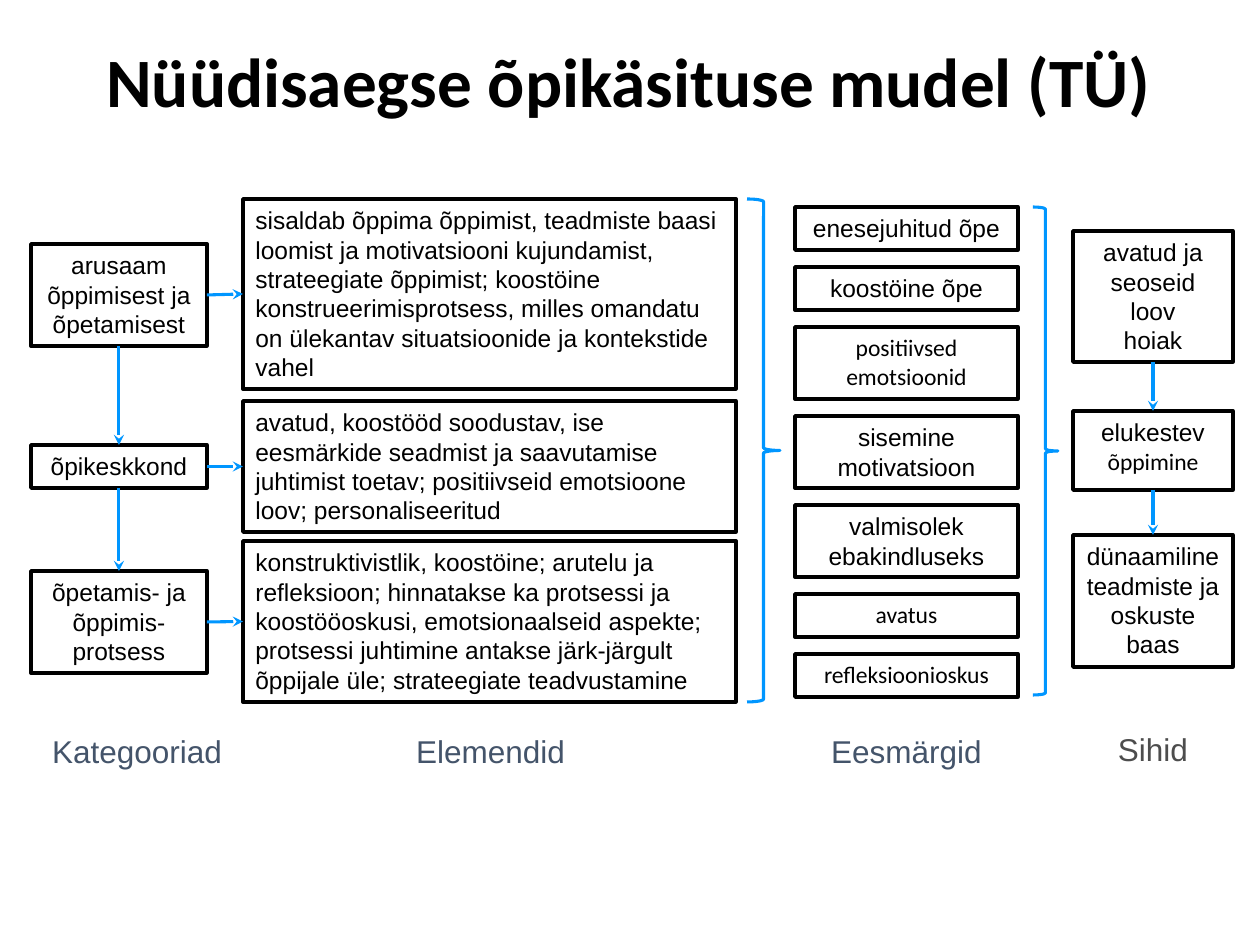
from itertools import pairwise

from lxml.etree import SubElement
from pptx import Presentation
from pptx.dml.color import RGBColor
from pptx.enum.shapes import MSO_CONNECTOR, MSO_SHAPE
from pptx.enum.text import MSO_ANCHOR, PP_ALIGN
from pptx.oxml.ns import qn
from pptx.util import Pt

SCALE = 914400 / 126
COLORS = {"ink": "000000", "paper": "FFFFFF", "arrow": "0096FF",
          "label": "44546A", "gray": "4D4D4D"}
SIZES = {"Arial": 14, "Calibri": 13.5}
TOP, LEFT, BOTTOM, RIGHT = range(4)


def px(*nums):
    return [round(n * SCALE) for n in nums]


def color(name):
    return RGBColor.from_string(COLORS[name])


def style(para, face, size, tone="ink", align=PP_ALIGN.CENTER):
    para.alignment = align
    para.font.name = face
    para.font.size = Pt(size)
    para.font.color.rgb = color(tone)


def add_box(slide, area, lines, align=PP_ALIGN.CENTER):
    """Draw a framed box; lines are (text, face) pairs, one per paragraph."""
    box = slide.shapes.add_shape(MSO_SHAPE.RECTANGLE, *px(*area))
    box.shadow.inherit = False
    box.fill.solid()
    box.fill.fore_color.rgb = color("paper")
    box.line.color.rgb = color("ink")
    box.line.width = Pt(2)
    frame = box.text_frame
    frame.word_wrap = True
    frame.vertical_anchor = MSO_ANCHOR.TOP
    for i, (text, face) in enumerate(lines):
        para = frame.add_paragraph() if i else frame.paragraphs[0]
        para.text = text
        style(para, face, SIZES[face], align=align)
    return box


def add_stack(slide, left, width, rows, align=PP_ALIGN.CENTER):
    """Draw a column of boxes; rows are (top, height, lines)."""
    return [add_box(slide, (left, top, width, height), lines, align)
            for top, height, lines in rows]


def add_arrow(slide, start, out, end, into):
    line = slide.shapes.add_connector(MSO_CONNECTOR.STRAIGHT, 0, 0, 0, 0)
    line.begin_connect(start, out)
    line.end_connect(end, into)
    line.line.color.rgb = color("arrow")
    line.line.width = Pt(1.75)
    SubElement(line.line._get_or_add_ln(), qn("a:tailEnd"), type="stealth")
    SubElement(line._element.spPr, qn("a:effectLst"))


def chain(slide, boxes):
    for upper, lower in pairwise(boxes):
        add_arrow(slide, upper, BOTTOM, lower, TOP)


def add_brace(slide, area):
    brace = slide.shapes.add_shape(MSO_SHAPE.RIGHT_BRACE, *px(*area))
    brace.shadow.inherit = False
    brace.fill.background()
    brace.line.color.rgb = color("arrow")
    brace.line.width = Pt(1.75)


def add_label(slide, area, text, tone="label", spacing=1.15):
    frame = slide.shapes.add_textbox(*px(*area)).text_frame
    frame.word_wrap = True
    pad = px(13)[0]
    frame.margin_left = frame.margin_right = pad
    frame.margin_top = frame.margin_bottom = pad
    para = frame.paragraphs[0]
    para.text = text
    para.line_spacing = spacing
    style(para, "Arial", 18, tone)


def add_title(slide, area, text):
    frame = slide.shapes.add_textbox(*px(*area)).text_frame
    frame.word_wrap = True
    frame.vertical_anchor = MSO_ANCHOR.MIDDLE
    para = frame.paragraphs[0]
    para.text = text
    para.line_spacing = 0.7
    para.font.bold = True
    style(para, "Calibri", 39.6)


def add_goals(slide, left, top, width, gap=17):
    goals = [
        (43, "enesejuhitud õpe", "Arial"),
        (43, "koostöine õpe", "Arial"),
        (72, "positiivsed emotsioonid", "Calibri"),
        (72, "sisemine motivatsioon", "Arial"),
        (72, "valmisolek ebakindluseks", "Arial"),
        (43, "avatus", "Calibri"),
        (43, "refleksioonioskus", "Calibri"),
    ]
    for height, text, face in goals:
        add_box(slide, (left, top, width, height), [(text, face)])
        top += height + gap


def add_parts(slide, left, top):
    """Draw the categories, each pointing to its elements."""
    kinds = add_stack(slide, left, 176, [
        (top + 45, 102, [("arusaam õppimisest ja õpetamisest", "Arial")]),
        (top + 246, 43, [("õpikeskkond", "Arial")]),
        (top + 372, 102, [("õpetamis- ja õppimis-\vprotsess", "Arial")]),
    ])
    items = add_stack(slide, left + 212, 493, [
        (top, 190, [(
            "sisaldab õppima õppimist, teadmiste baasi loomist ja "
            "motivatsiooni kujundamist, strateegiate õppimist; koostöine "
            "konstrueerimisprotsess, milles omandatu on ülekantav "
            "situatsioonide ja kontekstide vahel", "Arial")]),
        (top + 202, 131, [(
            "avatud, koostööd soodustav, ise eesmärkide seadmist ja "
            "saavutamise juhtimist toetav; positiivseid emotsioone loov; "
            "personaliseeritud", "Arial")]),
        (top + 342, 161, [(
            "konstruktivistlik, koostöine; arutelu ja refleksioon; "
            "hinnatakse ka protsessi ja koostööoskusi, emotsionaalseid "
            "aspekte; protsessi juhtimine antakse järk-järgult õppijale "
            "üle; strateegiate teadvustamine", "Arial")]),
    ], PP_ALIGN.LEFT)
    for kind, item in zip(kinds, items):
        add_arrow(slide, kind, RIGHT, item, LEFT)
    chain(slide, kinds)


def add_aims(slide, left, top):
    chain(slide, add_stack(slide, left, 160, [
        (top, 131, [("avatud ja seoseid loov", "Arial"),
                    ("hoiak", "Arial")]),
        (top + 180, 79, [("elukestev", "Arial"), ("õppimine", "Calibri")]),
        (top + 304, 132, [("dünaamiline teadmiste ja oskuste baas",
                           "Arial")]),
    ]))


def main():
    deck = Presentation()
    deck.slide_width, deck.slide_height = px(1260, 945)
    slide = deck.slides.add_slide(deck.slide_layouts[6])
    add_title(slide, (42, 50, 1174, 79), "Nüüdisaegse õpikäsituse mudel (TÜ)")
    add_parts(slide, 31, 199)
    add_brace(slide, (747, 199, 33, 503))
    add_goals(slide, 795, 207, 223)
    add_brace(slide, (1033, 207, 25, 488))
    add_aims(slide, 1073, 231)
    for left, width, text in [(31, 212, "Kategooriad"),
                              (243, 495, "Elemendid"),
                              (795, 223, "Eesmärgid")]:
        add_label(slide, (left, 713, width, 58), text)
    add_label(slide, (1073, 721, 160, 58), "Sihid", "gray", 0.9)
    deck.save("out.pptx")


if __name__ == "__main__":
    main()
